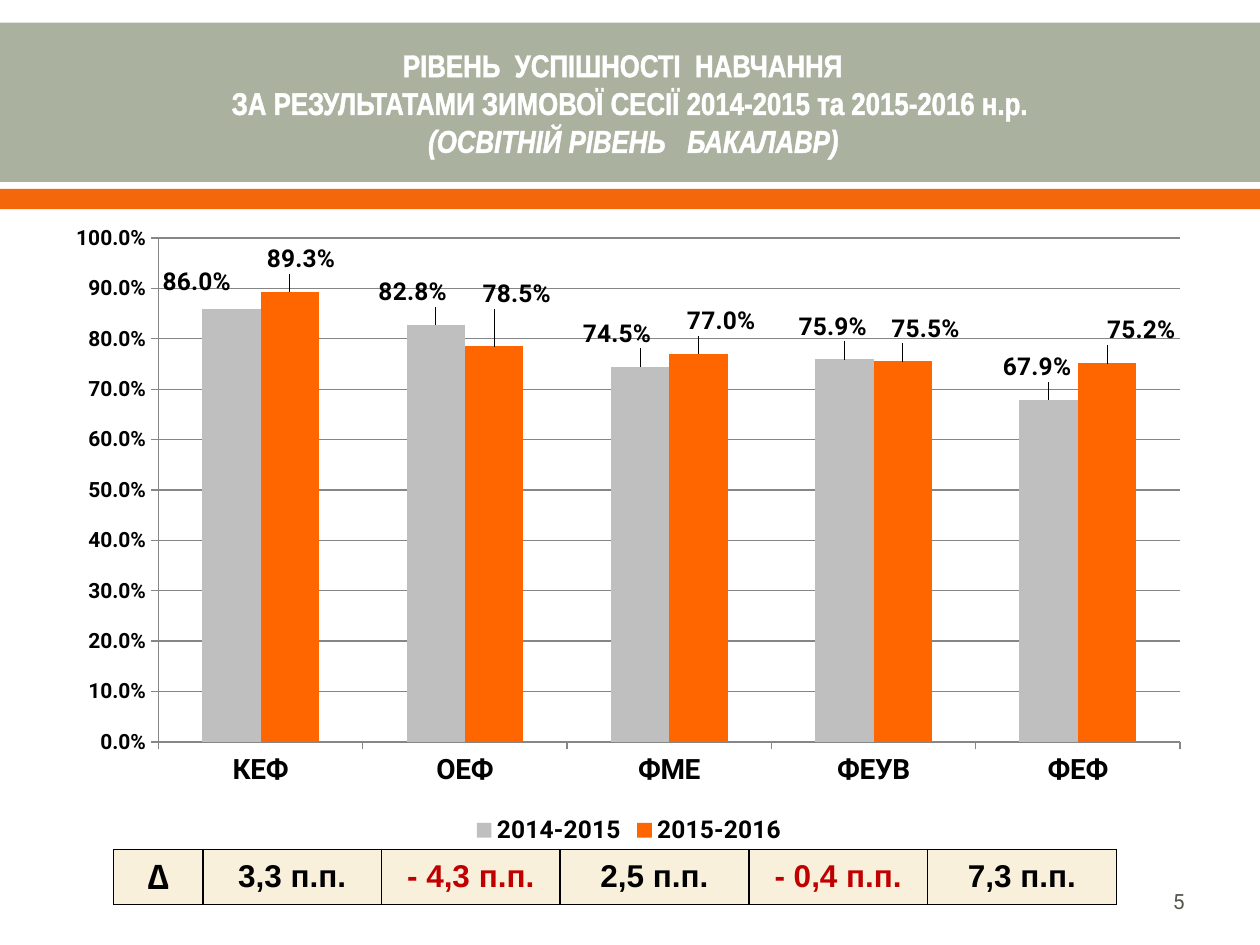
from dataclasses import dataclass

from lxml import etree
from pptx import Presentation
from pptx.chart.data import CategoryChartData
from pptx.dml.color import RGBColor
from pptx.enum.chart import XL_CHART_TYPE, XL_LABEL_POSITION, XL_LEGEND_POSITION, XL_TICK_MARK
from pptx.enum.shapes import MSO_SHAPE
from pptx.enum.text import MSO_ANCHOR, PP_ALIGN
from pptx.oxml import parse_xml
from pptx.oxml.ns import nsdecls, qn
from pptx.util import Pt

CENTER, RIGHT = PP_ALIGN.CENTER, PP_ALIGN.RIGHT
MIDDLE = MSO_ANCHOR.MIDDLE
RECTANGLE = MSO_SHAPE.RECTANGLE
COLUMNS = XL_CHART_TYPE.COLUMN_CLUSTERED
OUTSIDE_END = XL_LABEL_POSITION.OUTSIDE_END
BOTTOM = XL_LEGEND_POSITION.BOTTOM
TICK_OUTSIDE, TICK_NONE = XL_TICK_MARK.OUTSIDE, XL_TICK_MARK.NONE


@dataclass(frozen=True)
class Theme:
    band: str = "ABB19F"
    stripe: str = "F4680B"
    white: str = "FFFFFF"
    black: str = "000000"
    page_number: str = "55554A"
    negative: str = "C00000"
    cell: str = "F9F0DC"
    grid: str = "868686"
    title_font: str = "Arial Narrow"
    chart_font: str = "Roboto"
    table_font: str = "Arial"
    small: int = 12
    label: int = 14
    category: int = 16
    body: int = 18
    symbol: int = 20


THEME = Theme()
PERCENT = "0.0%"
CATEGORIES = ["КЕФ", "ОЕФ", "ФМЕ", "ФЕУВ", "ФЕФ"]
# Name, colour, values, label shifts as fractions of the chart's width and height
SERIES = [
    ("2014-2015", "BFBFBF", [0.86, 0.828, 0.745, 0.759, 0.679],
     [(-0.03, -0.01), (-0.02, -0.02), (-0.02, -0.02), (-0.01, -0.02), (-0.01, -0.02)]),
    ("2015-2016", "FF6600", [0.893, 0.785, 0.77, 0.755, 0.752],
     [(0.01, -0.02), (0.02, -0.05), (0.02, -0.02), (0.02, -0.02), (0.03, -0.02)]),
]
CHANGES = ["∆", "3,3 п.п.", "- 4,3 п.п.", "2,5 п.п.", "- 0,4 п.п.", "7,3 п.п."]
CHANGE_WIDTHS = [51, 102, 102, 108, 102, 108]


def set_format(font, color, **values):
    for name, value in values.items():
        setattr(font, name, value)
    font.color.rgb = RGBColor.from_string(color)


def add_band(slide, left, top, width, height, color):
    shape = slide.shapes.add_shape(RECTANGLE, Pt(left), Pt(top), Pt(width), Pt(height))
    shape.shadow.inherit = False
    shape.fill.solid()
    shape.fill.fore_color.rgb = RGBColor.from_string(color)
    shape.line.fill.background()
    # Behind the placeholders
    slide.shapes._spTree.remove(shape._element)
    slide.shapes._spTree.insert(2, shape._element)


def add_header(slide, left, top, width, height):
    add_band(slide, left, top, width, height, THEME.band)
    add_band(slide, left, top + height + 4, width, 11.5, THEME.stripe)

    title = slide.shapes.title
    title.left, title.top = Pt(left + 36), Pt(top + 1.5)
    title.width, title.height = Pt(width - 72), Pt(height - 3)
    frame = title.text_frame
    frame.word_wrap, frame.vertical_anchor = True, MIDDLE
    paragraph = frame.paragraphs[0]
    paragraph.alignment = CENTER
    lines = [
        ("РІВЕНЬ  УСПІШНОСТІ  НАВЧАННЯ  ", False),
        ("ЗА РЕЗУЛЬТАТАМИ ЗИМОВОЇ СЕСІЇ 2014-2015 та 2015-2016 н.р.", False),
        (" (ОСВІТНІЙ РІВЕНЬ   БАКАЛАВР)", True),
    ]
    for index, (text, italic) in enumerate(lines):
        if index:
            paragraph.add_line_break()
        run = paragraph.add_run()
        run.text = text
        set_format(run.font, THEME.white, name=THEME.title_font, size=Pt(THEME.body),
                   bold=True, italic=italic)
        outline = parse_xml(
            f'<a:ln {nsdecls("a")} w="{Pt(1.1)}"><a:solidFill>'
            f'<a:srgbClr val="{THEME.white}"/></a:solidFill></a:ln>')
        run._r.get_or_add_rPr().insert(0, outline)


def manual_layout(**values):
    layout = etree.Element(qn("c:layout"))
    manual = etree.SubElement(layout, qn("c:manualLayout"))
    for name, value in values.items():
        etree.SubElement(manual, qn(f"c:{name}")).set("val", str(value))
    return layout


def format_axis(axis, size):
    set_format(axis.tick_labels.font, THEME.black, name=THEME.chart_font, size=Pt(size), bold=True)
    axis.major_tick_mark, axis.minor_tick_mark = TICK_OUTSIDE, TICK_NONE
    axis.format.line.color.rgb = RGBColor.from_string(THEME.grid)


def format_series(series, color, shifts):
    series.format.fill.solid()
    series.format.fill.fore_color.rgb = RGBColor.from_string(color)
    series.invert_if_negative = False
    label_format = dict(name=THEME.chart_font, size=Pt(THEME.label), bold=True)
    labels = series.data_labels
    labels.show_value, labels.position = True, OUTSIDE_END
    labels.number_format, labels.number_format_is_linked = PERCENT, False
    set_format(labels.font, THEME.black, **label_format)
    for index in range(len(shifts)):
        label = series.points[index].data_label
        set_format(label.font, THEME.black, **label_format)
        label.position = OUTSIDE_END
    # Shift each label from its default place
    for element, (x, y) in zip(series._element.iter(qn("c:dLbl")), shifts):
        number_format = etree.Element(qn("c:numFmt"), formatCode=PERCENT, sourceLinked="0")
        element.insert(1, manual_layout(x=x, y=y))
        element.insert(2, number_format)


def add_results_chart(slide, left, top, width, height):
    data = CategoryChartData(number_format=PERCENT)
    data.categories = CATEGORIES
    for name, _, values, _ in SERIES:
        data.add_series(name, values)
    chart = slide.shapes.add_chart(COLUMNS, Pt(left), Pt(top), Pt(width), Pt(height), data).chart
    set_format(chart.font, THEME.black, name=THEME.chart_font, size=Pt(THEME.body))
    chart.has_title = False

    chart.has_legend = True
    chart.legend.position, chart.legend.include_in_layout = BOTTOM, False
    set_format(chart.legend.font, THEME.black, name=THEME.chart_font,
               size=Pt(THEME.label), bold=True)

    format_axis(chart.category_axis, THEME.category)
    value_axis = chart.value_axis
    format_axis(value_axis, THEME.small)
    value_axis.minimum_scale, value_axis.maximum_scale, value_axis.major_unit = 0, 1, 0.1
    value_axis.tick_labels.number_format = PERCENT
    value_axis.tick_labels.number_format_is_linked = False
    value_axis.major_gridlines.format.line.color.rgb = RGBColor.from_string(THEME.grid)

    plot = chart.plots[0]
    plot.gap_width, plot.overlap, plot.vary_by_categories = 150, 0, False
    for series, (_, color, _, shifts) in zip(plot.series, SERIES):
        format_series(series, color, shifts)

    # Fixed plot area
    plot_area = chart._chartSpace.find(f".//{qn('c:plotArea')}")
    for layout in plot_area.findall(qn("c:layout")):
        plot_area.remove(layout)
    plot_area.insert(0, manual_layout(layoutTarget="inner", xMode="edge", yMode="edge",
                                      x=0.09, y=0.04, w=0.89, h=0.79))


def add_cell_borders(cell):
    properties = cell._tc.get_or_add_tcPr()
    for index, side in enumerate(("lnL", "lnR", "lnT", "lnB")):
        properties.insert(index, parse_xml(
            f'<a:{side} {nsdecls("a")} w="{Pt(1)}"><a:solidFill>'
            f'<a:srgbClr val="{THEME.black}"/></a:solidFill></a:{side}>'))


def add_change_table(slide, left, top, height):
    table = slide.shapes.add_table(1, len(CHANGES), Pt(left), Pt(top),
                                   Pt(sum(CHANGE_WIDTHS)), Pt(height)).table
    table.first_row = table.horz_banding = False
    for index, (text, width) in enumerate(zip(CHANGES, CHANGE_WIDTHS)):
        table.columns[index].width = Pt(width)
        cell = table.cell(0, index)
        cell.fill.solid()
        cell.fill.fore_color.rgb = RGBColor.from_string(THEME.cell)
        cell.vertical_anchor = MIDDLE
        add_cell_borders(cell)
        paragraph = cell.text_frame.paragraphs[0]
        paragraph.alignment = CENTER
        run = paragraph.add_run()
        run.text = text
        set_format(run.font, THEME.negative if text.startswith("-") else THEME.black,
                   name=THEME.table_font, bold=True,
                   size=Pt(THEME.body if index else THEME.symbol))


def add_page_number(slide, left, top, width, height):
    frame = slide.shapes.add_textbox(Pt(left), Pt(top), Pt(width), Pt(height)).text_frame
    frame.word_wrap, frame.vertical_anchor = True, MIDDLE
    paragraph = frame.paragraphs[0]
    paragraph.alignment = RIGHT
    run = paragraph.add_run()
    run.text = "5"
    set_format(run.font, THEME.page_number, name=THEME.chart_font, size=Pt(THEME.small))


def main():
    presentation = Presentation()
    presentation.slide_width, presentation.slide_height = Pt(720), Pt(540)
    slide = presentation.slides.add_slide(presentation.slide_layouts[5])
    add_header(slide, 0, 13, 720, 91)
    add_page_number(slide, 516, 500.5, 168, 29)
    add_results_chart(slide, 31.5, 121.5, 656, 364.5)
    add_change_table(slide, 65, 485.5, 30)
    presentation.save("out.pptx")


if __name__ == "__main__":
    main()
